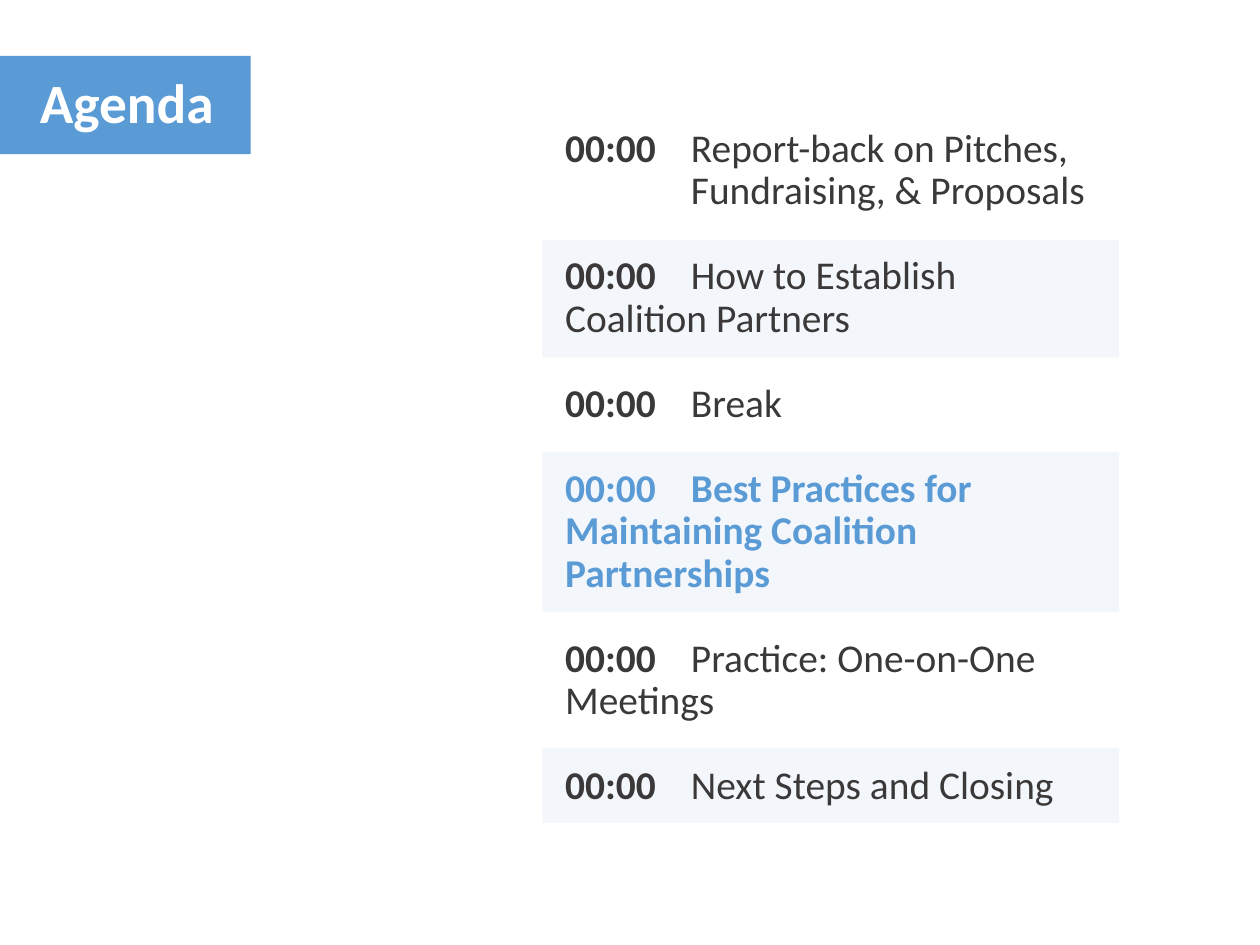
from lxml import etree
from pptx import Presentation
from pptx.dml.color import RGBColor
from pptx.enum.shapes import MSO_SHAPE
from pptx.enum.text import MSO_ANCHOR, MSO_AUTO_SIZE, PP_ALIGN
from pptx.oxml.ns import qn
from pptx.util import Pt

RECT = MSO_SHAPE.RECTANGLE
TOP, LEFT = MSO_ANCHOR.TOP, PP_ALIGN.LEFT
NO_FIT = MSO_AUTO_SIZE.NONE
EMU_PER_PX = 9144
BLUE, DARK, WHITE = "5B9BD5", "3A3838", "FFFFFF"
TAB_STEP, TAB_COUNT = 142, 4
ITEM_GAP = 34.5

BANDS = [(271, 133), (510, 181), (844, 85)]
AGENDA = [
    ("00:00\t", "Report-back on Pitches,", False, 0),
    ("", "\tFundraising, & Proposals", False, ITEM_GAP),
    ("00:00\t", "How to Establish \tCoalition Partners", False, ITEM_GAP),
    ("00:00\t", "Break", False, ITEM_GAP),
    ("00:00\t", "Best Practices for \tMaintaining Coalition \tPartnerships", True, ITEM_GAP),
    ("00:00\t", "Practice: One-on-One \tMeetings", False, ITEM_GAP),
    ("00:00\t", "Next Steps and Closing", False, 0),
]


def px(n):
    return n * EMU_PER_PX


def rgb(color):
    return RGBColor.from_string(color)


def add_text(p, text, size=32, color=DARK, bold=False, font="Calibri"):
    r = p.add_run()
    r.text = text
    r.font.name, r.font.size, r.font.bold = font, Pt(size), bold
    r.font.color.rgb = rgb(color)


class AgendaSlide:
    """Draws the elements of an agenda on one slide."""

    def __init__(self, prs):
        self.s = prs.slides.add_slide(prs.slide_layouts[5])

    def rect(self, x, y, w, h, color=BLUE, opacity=100):
        sp = self.s.shapes.add_shape(RECT, px(x), px(y), px(w), px(h))
        sp.shadow.inherit = False
        sp.line.fill.background()
        sp.fill.solid()
        sp.fill.fore_color.rgb = rgb(color)
        if opacity < 100:
            clr = sp.fill._xPr.find(".//" + qn("a:srgbClr"))
            etree.SubElement(clr, qn("a:alpha"), val=str(opacity * 1000))

    def title(self, text, x, y, w, h):
        sp = self.s.shapes.title
        sp.left, sp.top, sp.width, sp.height = px(x), px(y), px(w), px(h)
        sp.element.getparent().append(sp.element)
        tf = sp.text_frame
        tf.auto_size, tf.vertical_anchor = NO_FIT, TOP
        p = tf.paragraphs[0]
        p.alignment = LEFT
        add_text(p, text, size=45, color=WHITE, bold=True)

    def tabs(self, p):
        tab_list = etree.SubElement(p._p.get_or_add_pPr(), qn("a:tabLst"))
        for i in range(1, TAB_COUNT + 1):
            etree.SubElement(tab_list, qn("a:tab"), pos=str(px(i * TAB_STEP)), algn="l")

    def agenda(self, items, x, y, w, h):
        tf = self.s.shapes.add_textbox(px(x), px(y), px(w), px(h)).text_frame
        tf.word_wrap = True
        for i, (time, topic, current, gap) in enumerate(items):
            p = tf.add_paragraph() if i else tf.paragraphs[0]
            p.line_spacing, p.space_after = 0.9, Pt(gap)
            self.tabs(p)
            color = BLUE if current else DARK
            if time:
                add_text(p, time, color=color, bold=True)
            add_text(p, topic, color=color, bold=current)


def main():
    prs = Presentation()
    prs.slide_width, prs.slide_height = px(1422), px(1067)
    slide = AgendaSlide(prs)
    for y, h in BANDS:
        slide.rect(612, y, 651, h, opacity=7)
    slide.rect(0, 63, 283, 111)
    slide.title("Agenda", 35, 72, 281, 86)
    slide.agenda(AGENDA, 628, 140, 636, 786)
    prs.save("out.pptx")


if __name__ == "__main__":
    main()
